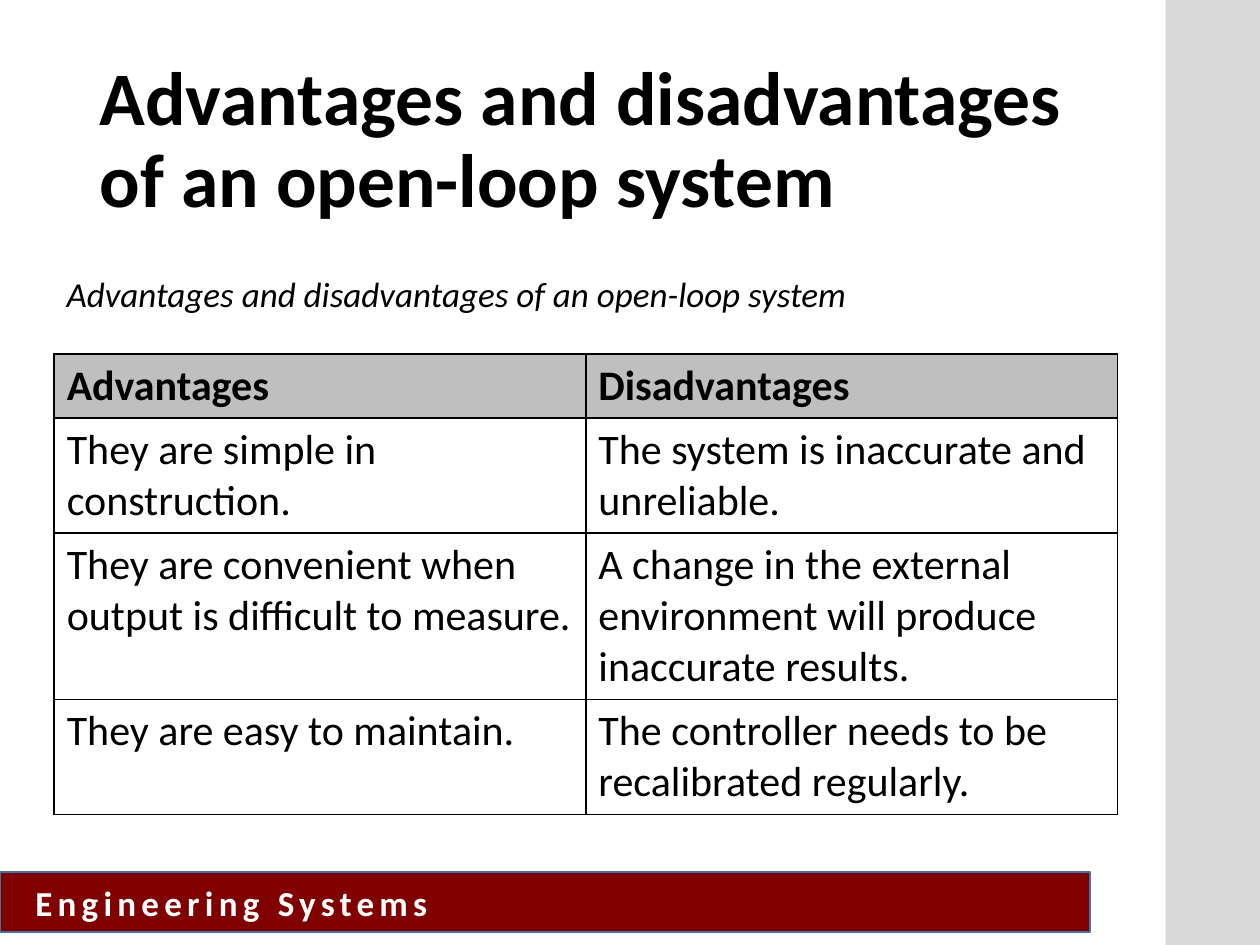
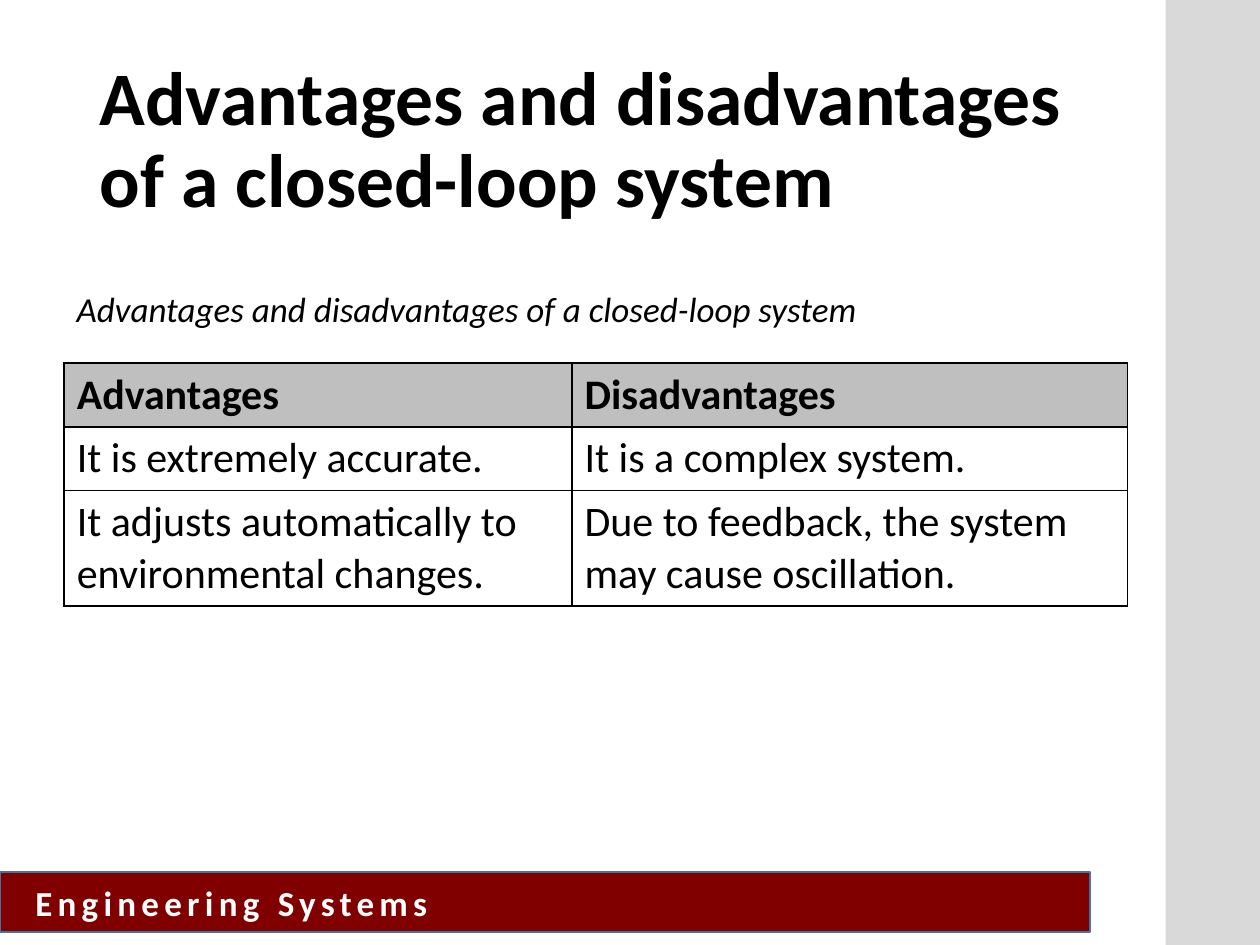
"""Build two slides that weigh up open-loop and closed-loop systems."""
import pptx
import pptx.util
import pptx.dml.color
import pptx.enum.shapes
import pptx.enum.text
import pptx.oxml

Inches = pptx.util.Inches
FONT = "Calibri"
BLACK, WHITE, RED, BLUE = "000000", "FFFFFF", "800000", "43739E"
SIDE, HEAD = "D9D9D9", "BFBFBF"
FOOTER = "Engineering Systems"
LEAD = "Advantages and disadvantages of "
HEADS = ("Advantages", "Disadvantages")
ROW = 0.41

SLIDES = [
    dict(
        topic="an open-loop system",
        note=(0.43, 2.11, 6.69, 0.44),
        spot=(0.43, 2.81),
        cols=(4.22, 4.22),
        rows=[
            ("They are simple in construction.",
             "The system is inaccurate and unreliable."),
            ("They are convenient when output is difficult to measure.",
             "A change in the external environment will produce inaccurate results."),
            ("They are easy to maintain.",
             "The controller needs to be recalibrated regularly."),
        ],
    ),
    dict(
        topic="a closed-loop system",
        note=(0.51, 2.23, 8.19, 0.44),
        spot=(0.51, 2.88),
        cols=(4.03, 4.41),
        rows=[
            ("It is extremely accurate.", "It is a complex system."),
            ("It adjusts automatically to environmental changes.",
             "Due to feedback, the system may cause oscillation."),
        ],
    ),
]


def tint(code):
    return pptx.dml.color.RGBColor.from_string(code)


def write(frame, text, size=24, color=BLACK, bold=False, italic=False,
          space=None, line=None):
    frame.word_wrap = True
    para = frame.paragraphs[0]
    para.alignment = pptx.enum.text.PP_ALIGN.LEFT
    if line:
        para.line_spacing = line
    run = para.add_run()
    run.text = text
    font = run.font
    font.name, font.size = FONT, pptx.util.Pt(size)
    font.bold, font.italic = bold, italic
    font.color.rgb = tint(color)
    if space:
        run._r.get_or_add_rPr().set("spc", str(space * 100))


def place(shape, box):
    shape.left, shape.top, shape.width, shape.height = map(Inches, box)


def band(slide, box, fill, edge=None):
    kind = pptx.enum.shapes.MSO_SHAPE.RECTANGLE
    shape = slide.shapes.add_shape(kind, *map(Inches, box))
    shape.shadow.inherit = False
    shape.fill.solid()
    shape.fill.fore_color.rgb = tint(fill)
    if edge:
        shape.line.color.rgb = tint(edge)
        shape.line.width = pptx.util.Pt(1)
    else:
        shape.line.fill.background()
    return shape


def frame_cell(cell):
    props = cell._tc.get_or_add_tcPr()
    space = pptx.oxml.ns.nsdecls("a")
    for side in "LRTB":
        props.append(pptx.oxml.parse_xml(
            f'<a:ln{side} {space} w="12700"><a:solidFill>'
            f'<a:srgbClr val="{BLACK}"/></a:solidFill></a:ln{side}>'))


def add_grid(slide, spot, cols, rows):
    data = [HEADS, *rows]
    size = (sum(cols), ROW * len(data))
    grid = slide.shapes.add_table(
        len(data), len(cols), *map(Inches, spot + size)).table
    grid.horz_banding = grid.first_row = False
    for col, width in zip(grid.columns, cols):
        col.width = Inches(width)
    for r, texts in enumerate(data):
        grid.rows[r].height = Inches(ROW)
        for c, text in enumerate(texts):
            cell = grid.cell(r, c)
            frame_cell(cell)
            if r == 0:
                cell.fill.solid()
                cell.fill.fore_color.rgb = tint(HEAD)
            else:
                cell.fill.background()
            write(cell.text_frame, text, bold=r == 0)


def add_slide(deck, topic, note, spot, cols, rows):
    slide = deck.slides.add_slide(deck.slide_layouts[5])
    foot = band(slide, (0, 6.92, 8.65, 0.48), RED, BLUE)
    foot.text_frame.margin_left = Inches(0.28)
    foot.text_frame.vertical_anchor = pptx.enum.text.MSO_ANCHOR.MIDDLE
    write(foot.text_frame, FOOTER, size=20, color=WHITE, bold=True, space=3)
    band(slide, (9.25, 0, 0.75, 7.5), SIDE)

    title = slide.shapes.title
    place(title, (0.69, 0.4, 8.44, 1.45))
    title.text_frame.auto_size = pptx.enum.text.MSO_AUTO_SIZE.NONE
    title.text_frame.vertical_anchor = pptx.enum.text.MSO_ANCHOR.MIDDLE
    write(title.text_frame, LEAD + topic, size=43.2, bold=True, line=0.9)

    add_grid(slide, spot, cols, rows)
    label = slide.shapes.add_textbox(*map(Inches, note))
    write(label.text_frame, LEAD + topic, size=20, italic=True)


def main():
    deck = pptx.Presentation()
    deck.slide_width, deck.slide_height = Inches(10), Inches(7.5)
    for item in SLIDES:
        add_slide(deck, **item)
    deck.save("out.pptx")


if __name__ == "__main__":
    main()
